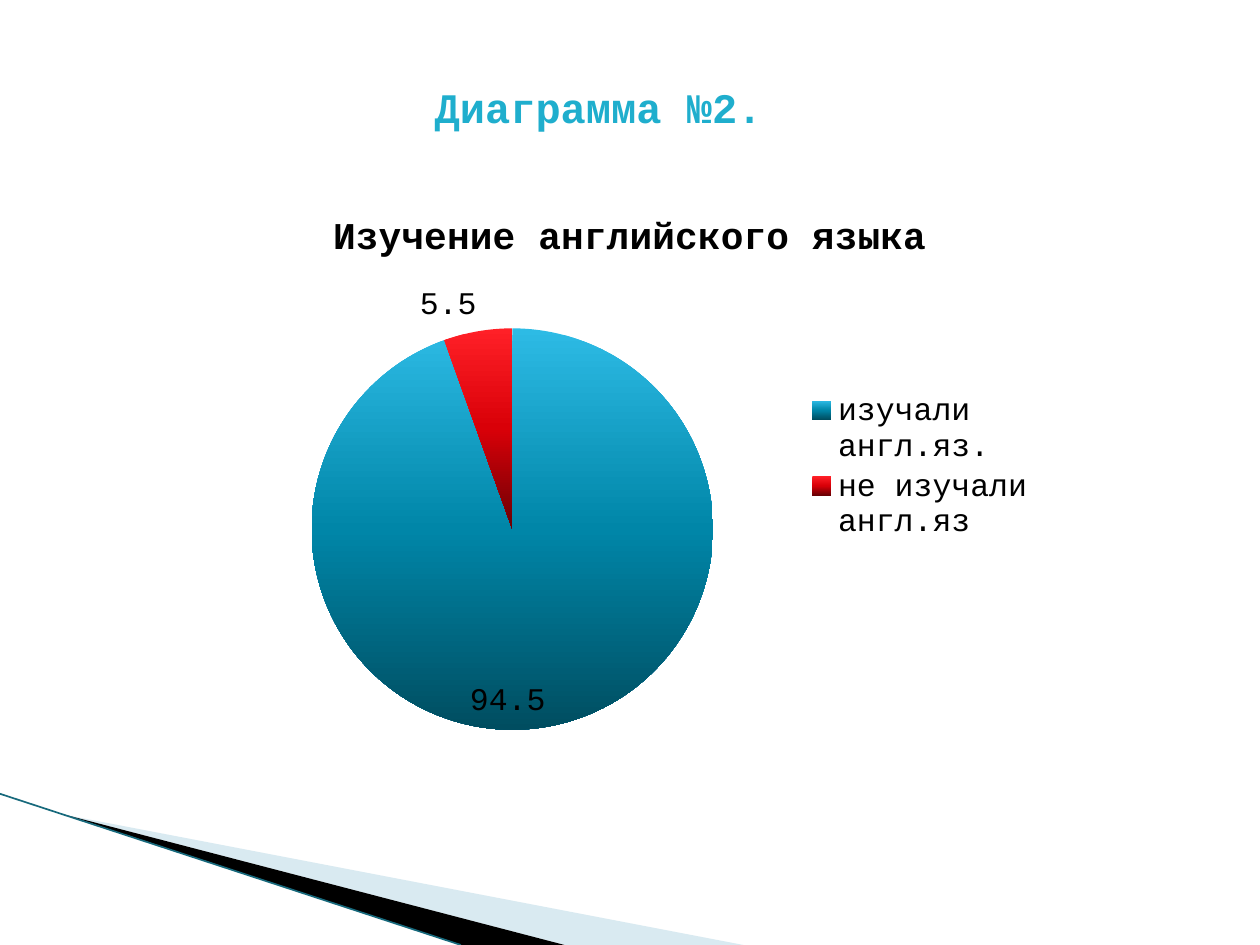
from copy import deepcopy
from dataclasses import dataclass

from lxml import etree
from pptx import Presentation
from pptx import util as u
from pptx.chart.data import CategoryChartData
from pptx.dml.color import RGBColor
from pptx.enum import chart as charts, shapes, text
from pptx.oxml.ns import qn

WIDTH, HEIGHT = 10, 7.5


@dataclass(frozen=True)
class Theme:
    font: str = "Courier New"
    heading: str = "1FAECD"
    ink: str = "000000"
    pale: str = "A0CBDC"
    edge: str = "17697C"
    heading_size: float = 24
    chart_title_size: float = 21.6
    body_size: float = 18
    slices: tuple = (("2DBBE5", "0086A8", "004D60"),
                     ("FF2027", "D90008", "6A0004"))


THEME = Theme()


def format_font(font, size, color=THEME.ink, bold=False):
    font.name = THEME.font
    font.size = u.Pt(size)
    font.bold = bold
    font.color.rgb = RGBColor.from_string(color)


def write_text(frame, words, **style):
    para = frame.paragraphs[0]
    para.alignment = text.PP_ALIGN.LEFT
    span = para.add_run()
    span.text = words
    format_font(span.font, **style)


def place_title(page, box):
    title = page.shapes.title
    title.left, title.top, title.width, title.height = map(u.Inches, box)
    frame = title.text_frame
    frame.word_wrap = False
    frame.auto_size = text.MSO_AUTO_SIZE.NONE
    frame.vertical_anchor = text.MSO_ANCHOR.TOP
    write_text(frame, "Диаграмма №2.", size=THEME.heading_size,
               color=THEME.heading, bold=True)


def draw_wedge(page, points, color, opacity=100):
    corners = [(x * 100, y * 100) for x, y in points]
    builder = page.shapes.build_freeform(*corners[0], scale=u.Inches(0.01))
    builder.add_line_segments(corners[1:], close=True)
    wedge = builder.convert_to_shape()
    wedge.shadow.inherit = False
    wedge.fill.solid()
    wedge.fill.fore_color.rgb = RGBColor.from_string(color)
    wedge.line.fill.background()
    if opacity < 100:
        shade = wedge._element.spPr.find(".//" + qn("a:srgbClr"))
        etree.SubElement(shade, qn("a:alpha"), val=str(opacity * 1000))


def draw_corner(page, box):
    left, top, width, height = box
    bottom = top + height

    def along(share):
        return left + width * share

    tip = (along(0.09), top + height * 0.14)
    draw_wedge(page, [tip, (along(1), bottom), (along(0.76), bottom)],
               THEME.pale, opacity=40)
    draw_wedge(page, [tip, (along(0.76), bottom), (along(0.62), bottom)],
               THEME.ink)
    edge = page.shapes.add_connector(
        shapes.MSO_CONNECTOR.STRAIGHT,
        *map(u.Inches, (left, top, along(0.62), bottom)))
    edge.line.color.rgb = RGBColor.from_string(THEME.edge)
    edge.line.width = u.Pt(0.95)
    etree.SubElement(edge._element.spPr, qn("a:effectLst"))


def fill_slice(point, colors):
    fill = point.format.fill
    fill.gradient()
    fill.gradient_angle = 270
    stops = point.format.fill._xPr.find(".//" + qn("a:gsLst"))
    stops.insert(1, deepcopy(stops[0]))
    for index, (stop, color) in enumerate(zip(fill.gradient_stops, colors)):
        stop.position = index / 2
        stop.color.rgb = RGBColor.from_string(color)


def set_layout(parent, after, shares, inner=False):
    for old in parent.findall(qn("c:layout")):
        parent.remove(old)
    layout = etree.Element(qn("c:layout"))
    manual = etree.SubElement(layout, qn("c:manualLayout"))
    settings = [("layoutTarget", "inner")] if inner else []
    settings += [("xMode", "edge"), ("yMode", "edge")]
    settings += zip("xywh", shares)
    for name, value in settings:
        etree.SubElement(manual, qn("c:" + name), val=str(value))
    if after is None:
        parent.insert(0, layout)
    else:
        after.addnext(layout)


def place_pie(page, box):
    data = CategoryChartData()
    data.categories = ["изучали англ.яз.", "не изучали англ.яз"]
    data.add_series("Изучение английского языка", (94.5, 5.5))
    pie = page.shapes.add_chart(
        charts.XL_CHART_TYPE.PIE, *map(u.Inches, box), data).chart
    format_font(pie.font, THEME.body_size)

    pie.has_title = True
    write_text(pie.chart_title.text_frame, "Изучение английского языка",
               size=THEME.chart_title_size, bold=True)
    pie.chart_title.include_in_layout = False

    pie.has_legend = True
    pie.legend.position = charts.XL_LEGEND_POSITION.RIGHT
    pie.legend.include_in_layout = False
    format_font(pie.legend.font, THEME.body_size)
    legend = pie.legend._element
    set_layout(legend, legend.find(qn("c:legendPos")),
               (0.71, 0.36, 0.27, 0.28))

    plot = pie.plots[0]
    plot.vary_by_categories = True
    set_layout(plot._element.getparent(), None,
               (0.12, 0.25, 0.48, 0.72), inner=True)
    positions = (charts.XL_LABEL_POSITION.INSIDE_END,
                 charts.XL_LABEL_POSITION.OUTSIDE_END)
    for index, position in enumerate(positions):
        point = plot.series[0].points[index]
        fill_slice(point, THEME.slices[index])
        format_font(point.data_label.font, THEME.body_size)
        point.data_label.position = position


def main():
    deck = Presentation()
    deck.slide_width, deck.slide_height = u.Inches(WIDTH), u.Inches(HEIGHT)
    page = deck.slides.add_slide(deck.slide_layouts[5])
    draw_corner(page, (0, HEIGHT * 0.84, WIDTH * 0.59, HEIGHT * 0.16))
    place_pie(page, (WIDTH / 6, HEIGHT * 0.2, WIDTH * 2 / 3, HEIGHT * 0.59))
    place_title(page, (WIDTH * 0.335, HEIGHT * 0.08, 2.85, 0.5))
    deck.save("out.pptx")


if __name__ == "__main__":
    main()
